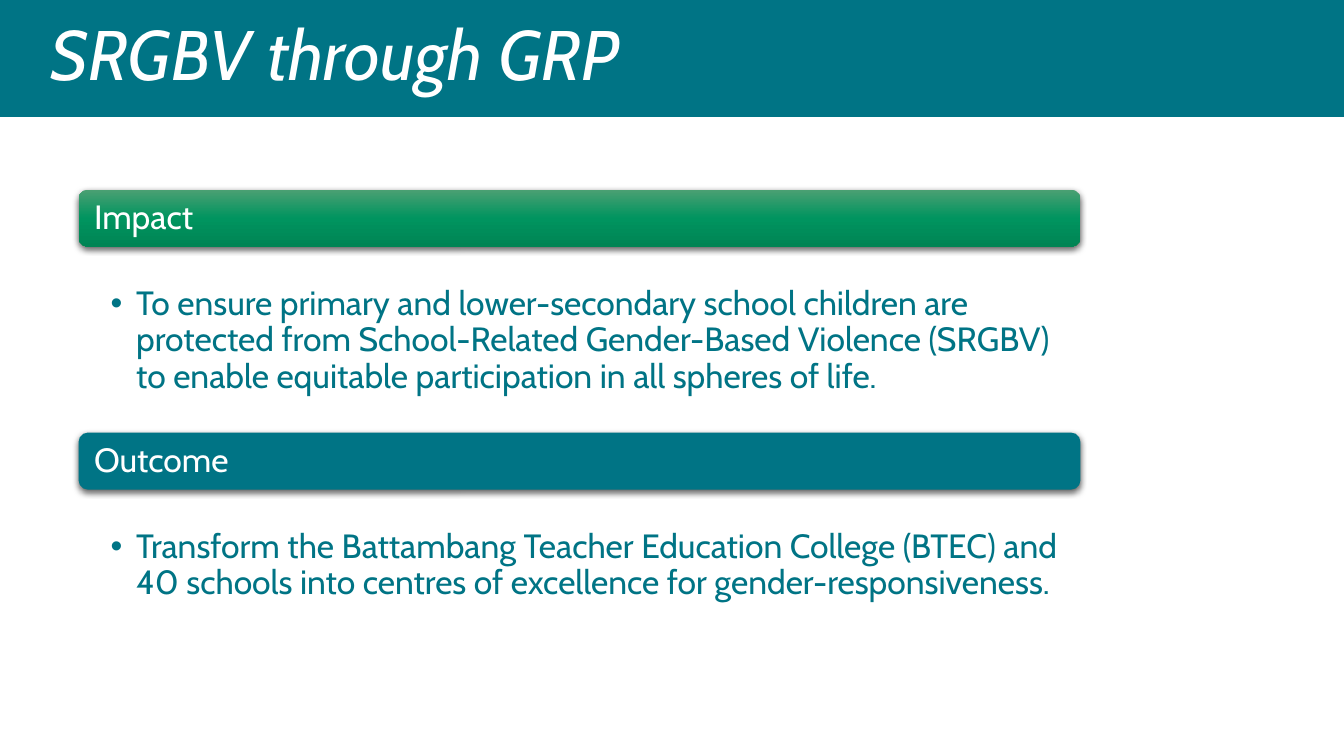
import copy

import pptx
import pptx.dml.color
import pptx.enum.shapes
import pptx.enum.text
import pptx.oxml
import pptx.oxml.ns
import pptx.util

Cm = pptx.util.Cm
Pt = pptx.util.Pt
RGBColor = pptx.dml.color.RGBColor
MSO_SHAPE = pptx.enum.shapes.MSO_SHAPE
MSO_ANCHOR = pptx.enum.text.MSO_ANCHOR
qn = pptx.oxml.ns.qn

TEAL = RGBColor(0x00, 0x74, 0x85)
WHITE = RGBColor(0xFF, 0xFF, 0xFF)
GREENS = [
    RGBColor(0x4B, 0xA0, 0x73),
    RGBColor(0x00, 0x94, 0x5F),
    RGBColor(0x00, 0x84, 0x54),
]
FONT = "Cabin"
BAR_HEIGHT = Cm(1.44)
SHADOW = (
    f'<a:outerShdw {pptx.oxml.ns.nsdecls("a")} blurRad="57150" dist="19050" '
    'dir="5400000" algn="ctr" rotWithShape="0">'
    '<a:srgbClr val="000000"><a:alpha val="63000"/></a:srgbClr></a:outerShdw>'
)


def place(sp, left, top, width, height):
    sp.left, sp.top, sp.width, sp.height = left, top, width, height


def set_frame(tf, anchor, left, top, right, bottom):
    tf.word_wrap = True
    tf.auto_size = pptx.enum.text.MSO_AUTO_SIZE.NONE
    tf.vertical_anchor = anchor
    tf.margin_left, tf.margin_top = left, top
    tf.margin_right, tf.margin_bottom = right, bottom


def add_text(p, text, size, color, italic=False):
    p.alignment = pptx.enum.text.PP_ALIGN.LEFT
    p.line_spacing = 0.9
    p.space_before = Pt(0)
    r = p.add_run()
    r.text = text
    r.font.name = FONT
    r.font.size = Pt(size)
    r.font.italic = italic
    r.font.color.rgb = color


def add_header(s, left, top, width, height):
    band = s.shapes.add_shape(MSO_SHAPE.RECTANGLE, left, top, width, height)
    band.shadow.inherit = False
    band.fill.solid()
    band.fill.fore_color.rgb = TEAL
    band.line.fill.background()
    s.shapes._spTree.insert(2, band._element)

    title = s.shapes.title
    place(title, left + Cm(1.02), top + Cm(0.58), Cm(23.88), Cm(1.78))
    set_frame(title.text_frame, MSO_ANCHOR.MIDDLE, Cm(0.25), Cm(0.13), Cm(0.25), Cm(0.13))
    add_text(title.text_frame.paragraphs[0], "SRGBV through GRP", 50, WHITE, italic=True)


def fill_bar(sp, colors):
    if len(colors) == 1:
        sp.fill.solid()
        sp.fill.fore_color.rgb = colors[0]
        return
    sp.fill.gradient()
    sp.fill.gradient_angle = 270
    stops = sp._element.spPr.find(".//" + qn("a:gsLst"))
    while len(stops) < len(colors):
        stops.append(copy.deepcopy(stops[0]))
    for i, (stop, color) in enumerate(zip(sp.fill.gradient_stops, colors)):
        stop.color.rgb = color
        stop.position = i / (len(colors) - 1)


def add_section(s, body, heading, text, colors, left, top, width, height):
    bar = s.shapes.add_shape(MSO_SHAPE.ROUNDED_RECTANGLE, left, top, width, BAR_HEIGHT)
    fill_bar(bar, colors)
    bar.line.fill.background()
    bar.shadow.inherit = False
    effects = bar._element.spPr.find(qn("a:effectLst"))
    effects.append(pptx.oxml.parse_xml(SHADOW))
    set_frame(bar.text_frame, MSO_ANCHOR.MIDDLE, Cm(0.32), Cm(0.2), Cm(0.32), Cm(0.2))
    add_text(bar.text_frame.paragraphs[0], heading, 24, WHITE)

    place(body, left, top + BAR_HEIGHT, width, height - BAR_HEIGHT)
    set_frame(body.text_frame, MSO_ANCHOR.TOP, Cm(0.81), Cm(1), Cm(0.41), Cm(0.08))
    p = body.text_frame.paragraphs[0]
    pPr = p._p.get_or_add_pPr()
    pPr.set("marL", str(Cm(0.64)))
    pPr.set("indent", str(-Cm(0.64)))
    color = pptx.oxml.parse_xml(
        f'<a:buClr {pptx.oxml.ns.nsdecls("a")}><a:srgbClr val="{TEAL}"/></a:buClr>'
    )
    pPr.append(color)
    bullet = pptx.oxml.parse_xml(f'<a:buChar {pptx.oxml.ns.nsdecls("a")} char="•"/>')
    pPr.append(bullet)
    add_text(p, text, 24, TEAL)


def main():
    prs = pptx.Presentation()
    prs.slide_width, prs.slide_height = Cm(33.87), Cm(19.05)
    s = prs.slides.add_slide(prs.slide_layouts[3])
    add_header(s, 0, 0, prs.slide_width, Cm(2.95))

    sections = [
        (
            "Impact",
            "To ensure primary and lower-secondary school children are protected from "
            "School-Related Gender-Based Violence (SRGBV) to enable equitable "
            "participation in all spheres of life.",
            GREENS,
        ),
        (
            "Outcome",
            "Transform the Battambang Teacher Education College (BTEC) and 40 schools "
            "into centres of excellence for gender-responsiveness.",
            [TEAL],
        ),
    ]
    height = Cm(6.12)
    for i, (heading, text, colors) in enumerate(sections):
        body = s.placeholders[i + 1]
        top = Cm(4.78) + i * height
        add_section(s, body, heading, text, colors, Cm(1.98), top, Cm(25.25), height)

    prs.save("out.pptx")


if __name__ == "__main__":
    main()
